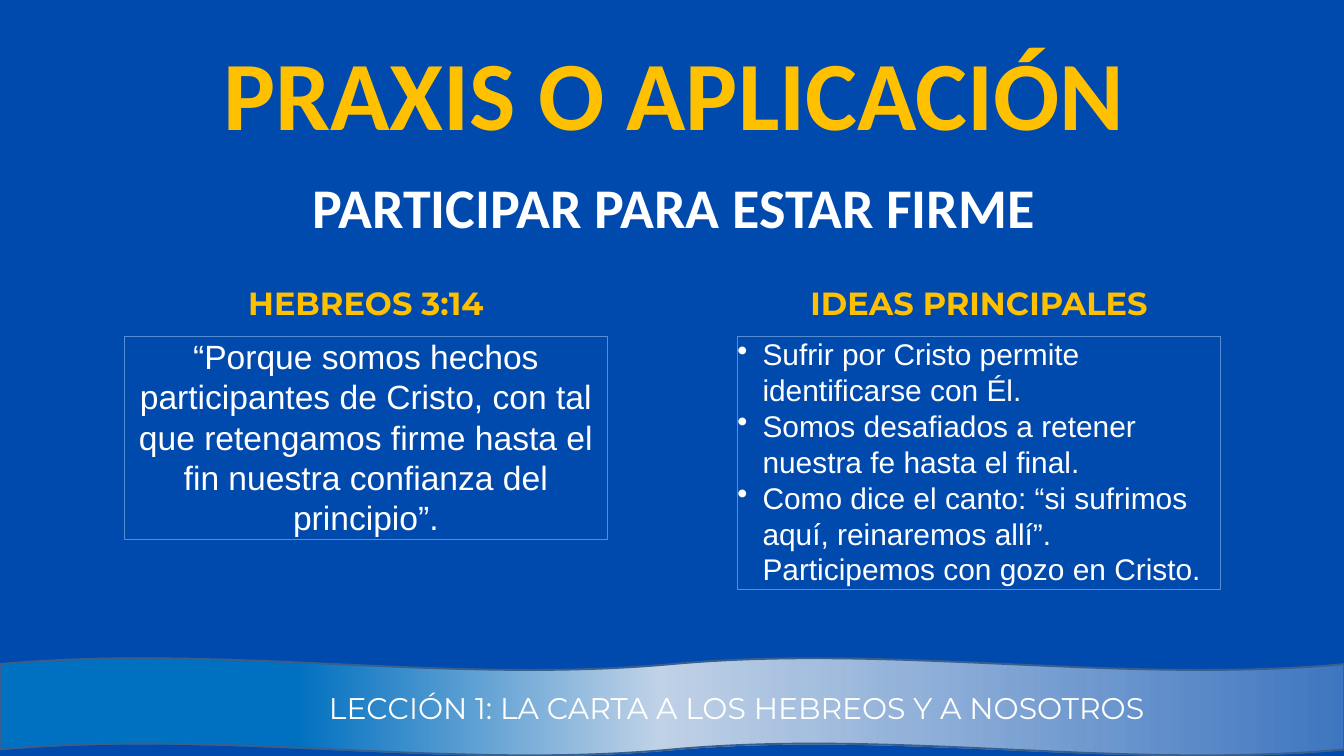
import dataclasses

import pptx
import pptx.dml.color
import pptx.enum.shapes
import pptx.enum.text
import pptx.oxml
import pptx.oxml.ns
import pptx.util

Pt = pptx.util.Pt
CENTER = pptx.enum.text.PP_ALIGN.CENTER
LEFT = pptx.enum.text.PP_ALIGN.LEFT
SHAPES = pptx.enum.shapes.MSO_SHAPE


@dataclasses.dataclass(frozen=True)
class Theme:
    """Colours, fonts and type sizes of the lesson."""
    blue: str = "004AAD"
    gold: str = "FFC000"
    white: str = "FFFFFF"
    frame: str = "558ED5"
    wave_edge: str = "3A5F8C"
    wave_stops: tuple = ((22, "0070C0", 100), (49, "C0D2E7", 100), (100, "CAD9EB", 30))
    title_font: str = "Calibri"
    label_font: str = "Montserrat"
    body_font: str = "Arial"
    title: float = 105
    subtitle: float = 60
    heading: float = 34.3
    verse: float = 36
    small: float = 32


THEME = Theme()


def rgb(value):
    """Return a colour from its hex value."""
    return pptx.dml.color.RGBColor.from_string(value)


def write(shape, lines, font, size, color, bold=False, align=CENTER, leading=None, inset=0):
    """Fill a shape with paragraphs of one style."""
    frame = shape.text_frame
    frame.word_wrap = True
    frame.auto_size = pptx.enum.text.MSO_AUTO_SIZE.SHAPE_TO_FIT_TEXT
    frame.vertical_anchor = pptx.enum.text.MSO_ANCHOR.TOP
    frame.margin_left = frame.margin_right = Pt(2 * inset)
    frame.margin_top = frame.margin_bottom = Pt(inset)
    frame.text = "\n".join(lines)
    for paragraph in frame.paragraphs:
        paragraph.alignment = align
        if leading:
            paragraph.line_spacing = Pt(leading)
        paragraph.font.name = font
        paragraph.font.size = Pt(size)
        paragraph.font.bold = bold
        paragraph.font.color.rgb = rgb(color)


def add_label(slide, box, text, font, size, color, **style):
    """Place one line of centred text in a box."""
    label = slide.shapes.add_textbox(*map(Pt, box))
    write(label, [text], font, size, color, **style)


def add_bullets(shape, indent):
    """Give each paragraph a hanging bullet."""
    for paragraph in shape.text_frame.paragraphs:
        properties = paragraph._p.get_or_add_pPr()
        properties.set("marL", str(Pt(indent)))
        properties.set("indent", str(-Pt(indent)))
        bullet = pptx.oxml.parse_xml(
            f'<a:buChar {pptx.oxml.ns.nsdecls("a")} char="•"/>')
        properties.insert_element_before(bullet, "a:tabLst", "a:defRPr", "a:extLst")


def add_titles(slide, box):
    """Place the title and subtitle."""
    left, top, width, height = box
    add_label(slide, (left, top, width, 135), "PRAXIS O APLICACIÓN",
              THEME.title_font, THEME.title, THEME.gold, bold=True, leading=141.9)
    add_label(slide, (left + 32, top + height - 124, width - 65, 124),
              "PARTICIPAR PARA ESTAR FIRME",
              THEME.title_font, THEME.subtitle, THEME.white, bold=True, leading=141.9)


def add_column(slide, box, heading, lines, size, bulleted=False):
    """Place a heading above a framed text."""
    left, top, width, height = box
    add_label(slide, (left, top, width, 42), heading,
              THEME.label_font, THEME.heading, THEME.gold, bold=True, leading=41.2)
    panel = slide.shapes.add_shape(
        SHAPES.RECTANGLE, *map(Pt, (left, top + 56, width, height - 56)))
    panel.shadow.inherit = False
    panel.fill.background()
    panel.line.color.rgb = rgb(THEME.frame)
    panel.line.width = Pt(0.75)
    write(panel, lines, THEME.body_font, size, THEME.white,
          align=LEFT if bulleted else CENTER)
    if bulleted:
        add_bullets(panel, 27)


def add_footer(slide, box, lesson):
    """Place the wave with the name of the lesson."""
    left, top, width, height = box
    wave = slide.shapes.add_shape(SHAPES.DOUBLE_WAVE, *map(Pt, box))
    wave.shadow.inherit = False
    wave.line.color.rgb = rgb(THEME.wave_edge)
    wave.line.width = Pt(2)
    wave.fill.gradient()
    wave.fill.gradient_angle = 0
    stops = wave._element.spPr.find(".//" + pptx.oxml.ns.qn("a:gsLst"))
    stops.clear()
    for position, color, opacity in THEME.wave_stops:
        stops.append(pptx.oxml.parse_xml(
            f'<a:gs {pptx.oxml.ns.nsdecls("a")} pos="{position * 1000}">'
            f'<a:srgbClr val="{color}"><a:alpha val="{opacity * 1000}"/></a:srgbClr></a:gs>'))
    add_label(slide, (left + 222.5, top + 30, width - 306, 46), lesson,
              THEME.label_font, THEME.small, THEME.white, inset=3.6)


def main():
    """Build the slide and save it."""
    deck = pptx.Presentation()
    deck.slide_width, deck.slide_height = Pt(1440), Pt(810)
    slide = deck.slides.add_slide(deck.slide_layouts[6])
    slide.background.fill.solid()
    slide.background.fill.fore_color.rgb = rgb(THEME.blue)

    add_titles(slide, (227, 19, 991, 219.5))
    add_column(slide, (133, 304, 518, 274), "HEBREOS 3:14",
               ["“Porque somos hechos participantes de Cristo, con tal que retengamos "
                "firme hasta el fin nuestra confianza del principio”."], THEME.verse)
    add_column(slide, (790, 304, 518, 327.5), "IDEAS PRINCIPALES",
               ["Sufrir por Cristo permite identificarse con Él.",
                "Somos desafiados a retener nuestra fe hasta el final.",
                "Como dice el canto: “si sufrimos aquí, reinaremos allí”. "
                "Participemos con gozo en Cristo."], THEME.small, bulleted=True)
    add_footer(slide, (0, 705, 1440, 104.5),
               "LECCIÓN 1: LA CARTA A LOS HEBREOS Y A NOSOTROS")
    deck.save("out.pptx")


if __name__ == "__main__":
    main()
